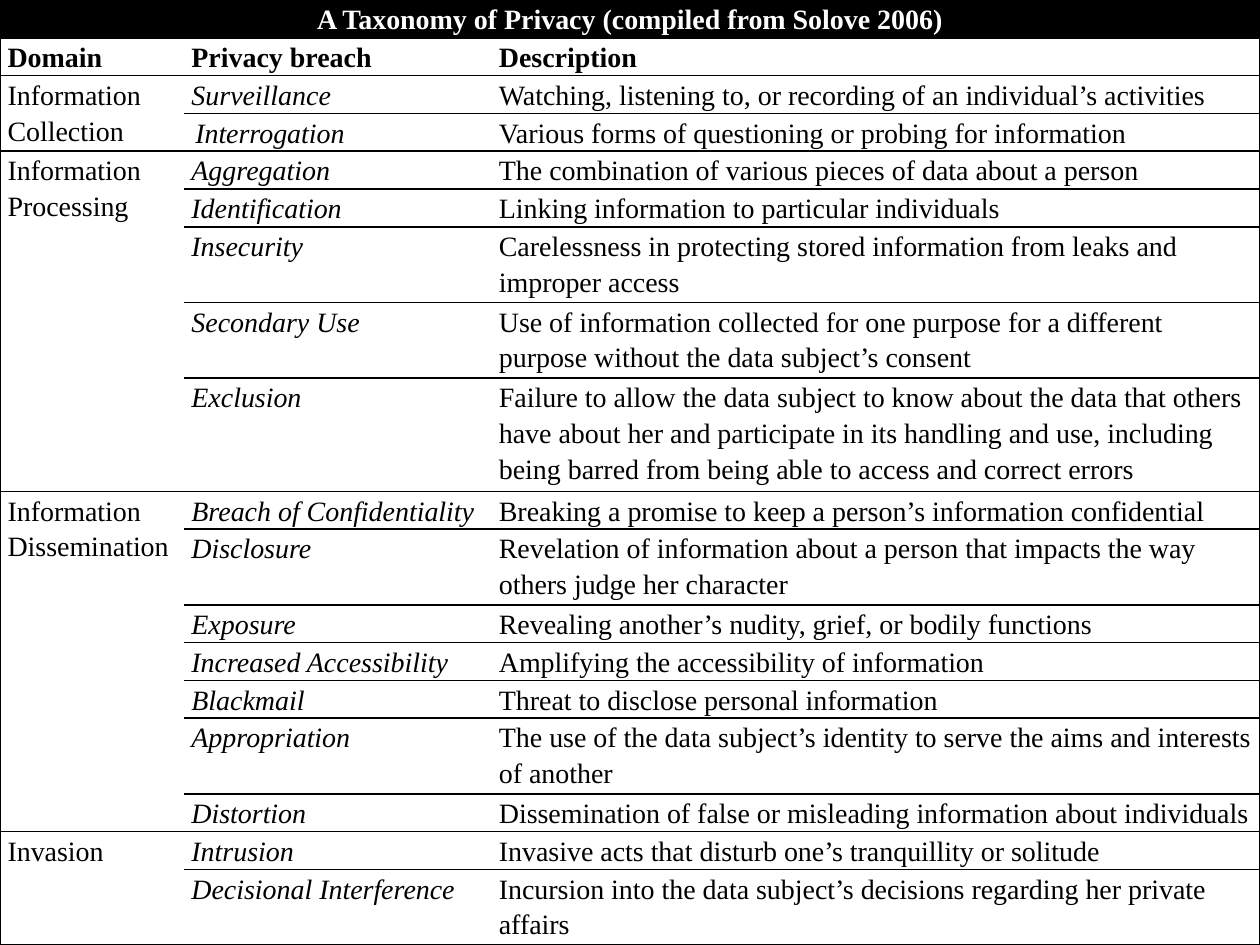
from dataclasses import dataclass

from pptx import Presentation
from pptx.dml.color import RGBColor
from pptx.enum.shapes import MSO_SHAPE as Shape
from pptx.enum.text import MSO_ANCHOR as Anchor, PP_ALIGN as Align
from pptx.oxml.ns import qn
from pptx.slide import Slide
from pptx.table import Table, _Cell as Cell
from pptx.util import Pt
from lxml.etree import SubElement

EMU_PER_PX = 9144  # 100 px to the inch
WIDTH, HEIGHT = 1000, 750
LINE_HEIGHT = 30
COLUMN_WIDTHS = (146, 244, 610)
BLACK, WHITE = "000000", "FFFFFF"
NO_STYLE = "{2D5ABB26-0587-4C30-8999-92F81FD0307C}"

TITLE = "A Taxonomy of Privacy (compiled from Solove 2006)"
HEADINGS = ("Domain", "Privacy breach", "Description")


@dataclass(frozen=True)
class Breach:
    name: str
    description: str
    lines: int = 1
    indent: int = 0


@dataclass(frozen=True)
class Domain:
    name: str
    breaches: tuple[Breach, ...]


DOMAINS = (
    Domain("Information Collection", (
        Breach("Surveillance", "Watching, listening to, or recording of an individual’s activities"),
        Breach("Interrogation", "Various forms of questioning or probing for information", indent=3),
    )),
    Domain("Information Processing", (
        Breach("Aggregation", "The combination of various pieces of data about a person"),
        Breach("Identification", "Linking information to particular individuals"),
        Breach("Insecurity", "Carelessness in protecting stored information from leaks and "
               "improper access", 2),
        Breach("Secondary Use", "Use of information collected for one purpose for a different "
               "purpose without the data subject’s consent", 2),
        Breach("Exclusion", "Failure to allow the data subject to know about the data that others "
               "have about her and participate in its handling and use, including "
               "being barred from being able to access and correct errors", 3),
    )),
    Domain("Information Dissemination", (
        Breach("Breach of Confidentiality",
               "Breaking a promise to keep a person’s information confidential"),
        Breach("Disclosure", "Revelation of information about a person that impacts the way "
               "others judge her character", 2),
        Breach("Exposure", "Revealing another’s nudity, grief, or bodily functions"),
        Breach("Increased Accessibility", "Amplifying the accessibility of information"),
        Breach("Blackmail", "Threat to disclose personal information"),
        Breach("Appropriation", "The use of the data subject’s identity to serve the aims and "
               "interests of another", 2),
        Breach("Distortion", "Dissemination of false or misleading information about individuals"),
    )),
    Domain("Invasion", (
        Breach("Intrusion", "Invasive acts that disturb one’s tranquillity or solitude"),
        Breach("Decisional Interference", "Incursion into the data subject’s decisions regarding "
               "her private affairs", 2),
    )),
)


def px(length: int) -> int:
    return length * EMU_PER_PX


def color(value: str) -> RGBColor:
    return RGBColor.from_string(value)


def add_background(slide: Slide) -> None:
    box = slide.shapes.add_shape(Shape.RECTANGLE, 0, 0, px(WIDTH), px(HEIGHT))
    box.shadow.inherit = False
    box.fill.solid()
    box.fill.fore_color.rgb = color(WHITE)
    box.line.color.rgb = color(WHITE)
    box.line.width = Pt(2)


def add_table(slide: Slide, row_lines: list[int]) -> Table:
    frame = slide.shapes.add_table(len(row_lines), len(COLUMN_WIDTHS), 0, 0,
                                   px(WIDTH), px(sum(row_lines) * LINE_HEIGHT))
    table = frame.table
    table.first_row = table.horz_banding = False
    table._tbl.tblPr.find(qn("a:tableStyleId")).text = NO_STYLE
    for column, width in zip(table.columns, COLUMN_WIDTHS):
        column.width = px(width)
    for row, lines in zip(table.rows, row_lines):
        row.height = px(lines * LINE_HEIGHT)
    return table


def set_borders(cell: Cell, visible: str) -> None:
    """Draw the sides named in visible (L, R, T, B) and hide the others."""
    properties = cell._tc.get_or_add_tcPr()
    for side in "LRTB":
        line = SubElement(properties, qn(f"a:ln{side}"), w=str(Pt(1)))
        if side in visible:
            fill = SubElement(line, qn("a:solidFill"))
            SubElement(fill, qn("a:srgbClr"), val=BLACK)
        else:
            SubElement(line, qn("a:noFill"))


def write_cell(cell: Cell, text: str, ink: str = BLACK, bold: bool = False,
               italic: bool = False, align: Align = Align.LEFT, indent: int = 0) -> None:
    layout = {"margin_left": px(6 + indent), "margin_right": px(6), "margin_top": 0,
              "margin_bottom": 0, "vertical_anchor": Anchor.TOP}
    for name, value in layout.items():
        setattr(cell, name, value)
    para = cell.text_frame.paragraphs[0]
    para.alignment = align
    para.line_spacing = 1.15
    span = para.add_run()
    span.text = text
    style = {"name": "Times New Roman", "size": Pt(16), "bold": bold, "italic": italic}
    for name, value in style.items():
        setattr(span.font, name, value)
    span.font.color.rgb = color(ink)


def format_grid(table: Table) -> None:
    """Rule the rows, with outer sides only and no lines inside merged domains."""
    domain_ends = [1]
    for domain in DOMAINS:
        domain_ends.append(domain_ends[-1] + len(domain.breaches))
    for row in range(len(table.rows)):
        for column, outer_side in enumerate(("L", "", "R")):
            cell = table.cell(row, column)
            top = "" if cell.is_spanned and row > 0 else "T"
            bottom = "B" if cell.is_merge_origin or not cell.is_spanned or row in domain_ends else ""
            set_borders(cell, "LRTB" if row == 0 else outer_side + top + bottom)
            if row == 0:
                cell.fill.solid()
                cell.fill.fore_color.rgb = color(BLACK)
            else:
                cell.fill.background()


def main() -> None:
    deck = Presentation()
    deck.slide_width, deck.slide_height = px(WIDTH), px(HEIGHT)
    slide = deck.slides.add_slide(deck.slide_layouts[6])
    add_background(slide)

    # Title and heading rows
    breach_lines = [breach.lines for domain in DOMAINS for breach in domain.breaches]
    table = add_table(slide, [1, 1] + breach_lines)
    table.cell(0, 0).merge(table.cell(0, 2))
    write_cell(table.cell(0, 0), TITLE, WHITE, bold=True, align=Align.CENTER)
    for column, heading in enumerate(HEADINGS):
        write_cell(table.cell(1, column), heading, bold=True)

    # One merged domain cell beside its breaches
    row = 2
    for domain in DOMAINS:
        table.cell(row, 0).merge(table.cell(row + len(domain.breaches) - 1, 0))
        write_cell(table.cell(row, 0), domain.name)
        for breach in domain.breaches:
            write_cell(table.cell(row, 1), breach.name, italic=True, indent=breach.indent)
            write_cell(table.cell(row, 2), breach.description)
            row += 1

    format_grid(table)
    deck.save("out.pptx")


if __name__ == "__main__":
    main()
